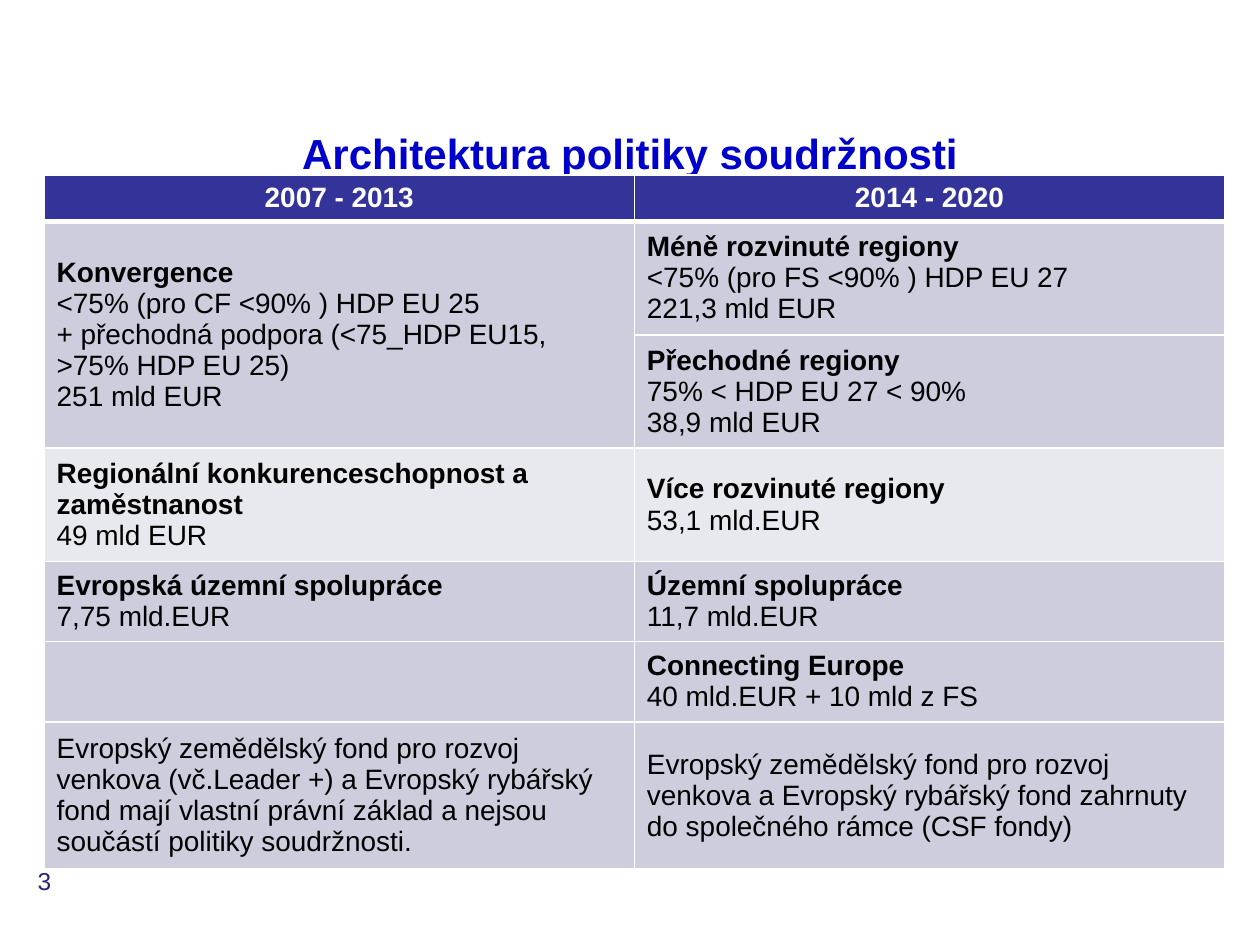
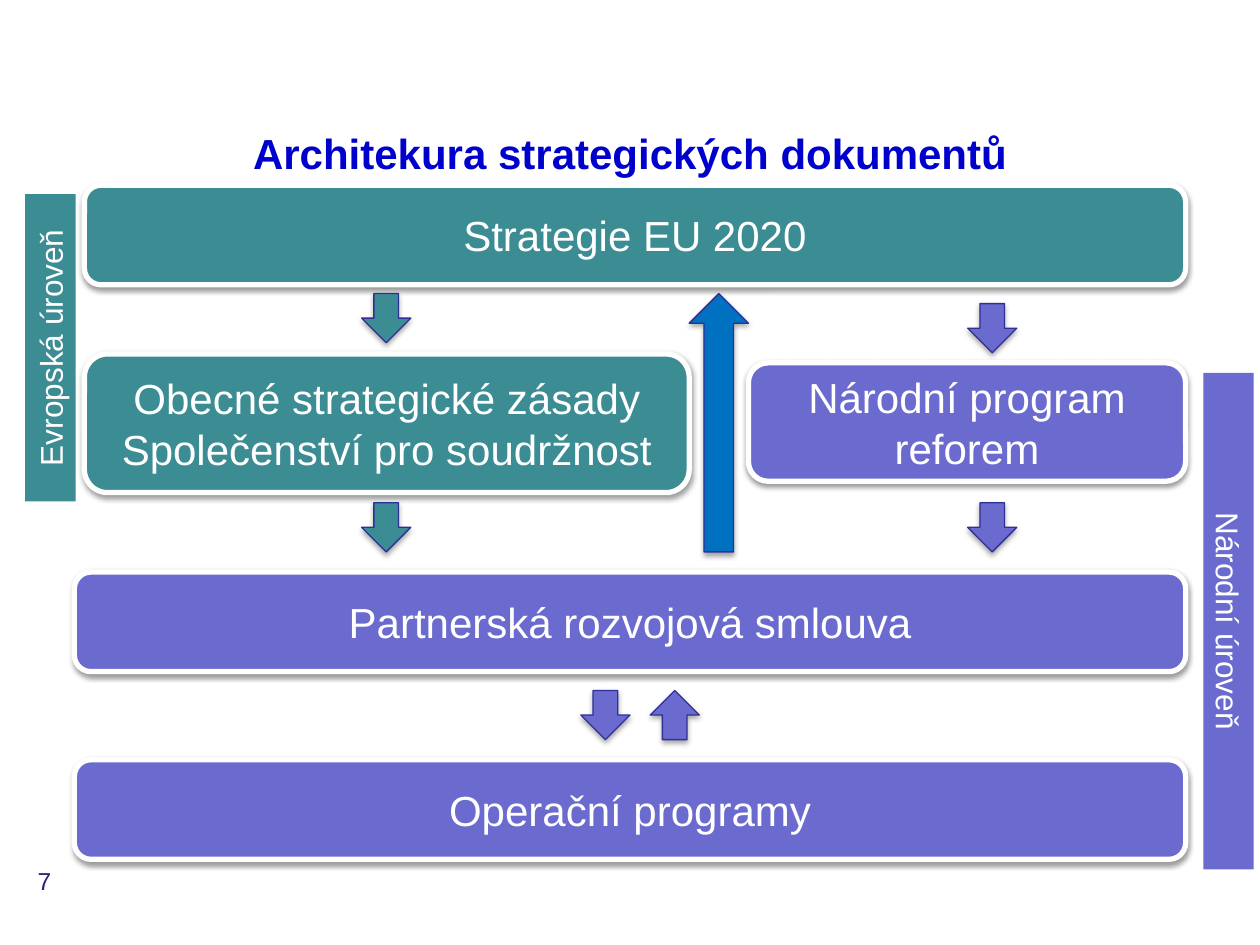
from dataclasses import dataclass

from lxml import etree
from pptx import Presentation
from pptx.dml.color import RGBColor
from pptx.enum.shapes import MSO_SHAPE
from pptx.enum.text import MSO_ANCHOR, PP_ALIGN
from pptx.oxml import parse_xml
from pptx.oxml.ns import nsdecls, qn
from pptx.util import Inches, Pt

ROUNDED, RECTANGLE = MSO_SHAPE.ROUNDED_RECTANGLE, MSO_SHAPE.RECTANGLE
DOWN, UP = MSO_SHAPE.DOWN_ARROW, MSO_SHAPE.UP_ARROW
LEFT, CENTER = PP_ALIGN.LEFT, PP_ALIGN.CENTER
TOP, MIDDLE = MSO_ANCHOR.TOP, MSO_ANCHOR.MIDDLE


@dataclass(frozen=True)
class Theme:
    font: str = "Arial"
    title: str = "0000CC"
    number: str = "262673"
    white: str = "FFFFFF"
    black: str = "000000"
    header: str = "333399"
    band_dark: str = "CDCDDE"
    band_light: str = "E8E8EF"
    european: str = "3C8C93"
    national: str = "6B6BCF"
    feedback: str = "0070C0"
    arrow_line: str = "2F2F98"
    title_size: int = 24
    box_size: int = 24
    label_size: int = 18
    table_size: int = 16
    number_size: int = 14


THEME = Theme()
TITLE_BOX = (0, 0.76, 10, 0.71)
NUMBER_BOX = (0.2, 6.82, 2.33, 0.52)
TABLE_BOX = (0.35, 1.39, 9.37, 5.48)
DIAGRAM_BOX = (0.59, 1.47, 8.82, 5.35)

# Each cell: (bold heading, plain lines); None continues the cell above
PERIODS = ("2007 - 2013", "2014 - 2020")
ROW_HEIGHTS = (0.35, 0.9, 0.9, 0.9, 0.63, 0.64, 1.16)
LIGHT_ROW = 3
POLICY_ROWS = (
    (("Konvergence", ("<75% (pro CF <90% ) HDP EU 25",
                      "+ přechodná podpora (<75_HDP EU15, >75% HDP EU 25)",
                      "251 mld EUR")),
     ("Méně rozvinuté regiony", ("<75% (pro FS <90% ) HDP EU 27", "221,3 mld EUR"))),
    (None,
     ("Přechodné regiony", ("75% < HDP EU 27 < 90%", "38,9 mld EUR"))),
    (("Regionální konkurenceschopnost a zaměstnanost", ("49 mld EUR",)),
     ("Více rozvinuté regiony", ("53,1 mld.EUR",))),
    (("Evropská územní spolupráce", ("7,75 mld.EUR",)),
     ("Územní spolupráce", ("11,7 mld.EUR",))),
    (("", ()),
     ("Connecting Europe", ("40 mld.EUR + 10 mld z FS",))),
    (("", ("Evropský zemědělský fond pro rozvoj venkova (vč.Leader +) a Evropský "
           "rybářský fond mají vlastní právní základ a nejsou součástí politiky "
           "soudržnosti.",)),
     ("", ("Evropský zemědělský fond pro rozvoj venkova a Evropský rybářský fond "
           "zahrnuty do společného rámce (CSF fondy)",))),
)

# Diagram parts, relative to the diagram box
BAR_HEIGHT = 0.79
ARROW_SIZE = 0.39
EUROPEAN_COLUMN, NATIONAL_COLUMN = 2.28, 7.09
LOWER_ARROWS, EXCHANGE_ARROWS = 2.52, 4.01
DOCUMENTS = (
    (("Obecné strategické zásady", "Společenství pro soudržnost"),
     (0.08, 1.34, 4.8, 1.1), THEME.european),
    (("Strategie EU 2020",), (0.08, 0, 8.74, BAR_HEIGHT), THEME.european),
    (("Národní program reforem",), (5.35, 1.41, 3.47, 0.94), THEME.national),
    (("Partnerská rozvojová smlouva",), (0, 3.07, 8.82, BAR_HEIGHT), THEME.national),
    (("Operační programy",), (0, 4.56, 8.82, BAR_HEIGHT), THEME.national),
)
ARROWS = (
    (DOWN, EUROPEAN_COLUMN, 0.86, THEME.european),
    (DOWN, EUROPEAN_COLUMN, LOWER_ARROWS, THEME.european),
    (DOWN, NATIONAL_COLUMN, 0.94, THEME.national),
    (DOWN, NATIONAL_COLUMN, LOWER_ARROWS, THEME.national),
    (DOWN, 4.02, EXCHANGE_ARROWS, THEME.national),
    (UP, 4.57, EXCHANGE_ARROWS, THEME.national),
)
FEEDBACK_ARROW = (4.88, 0.86, 0.47, 2.05)
LEVELS = (
    ("Evropská úroveň", (-0.39, 0.07, 0.4, 2.44), 270, THEME.european),
    ("Národní úroveň", (8.96, 1.49, 0.4, 3.94), 90, THEME.national),
)


def color(value):
    return RGBColor.from_string(value)


def inside(box, part):
    """Turn a place relative to a box into a place on the slide."""
    return box[0] + part[0], box[1] + part[1], part[2], part[3]


def write(text_frame, lines, size, ink, align=LEFT, spacing=None):
    """Write (text, bold) lines as paragraphs."""
    for index, (text, bold) in enumerate(lines):
        paragraph = text_frame.paragraphs[0] if index == 0 else text_frame.add_paragraph()
        paragraph.alignment = align
        if spacing:
            paragraph.line_spacing = spacing
        run = paragraph.add_run()
        run.text = text
        formats = {"name": THEME.font, "size": Pt(size), "bold": bold}
        for name, value in formats.items():
            setattr(run.font, name, value)
        run.font.color.rgb = color(ink)


def add_text(slide, box, text, size, ink, anchor=TOP, bold=False, **layout):
    text_frame = slide.shapes.add_textbox(*map(Inches, box)).text_frame
    text_frame.word_wrap = True
    text_frame.vertical_anchor = anchor
    write(text_frame, [(text, bold)], size, ink, **layout)


def add_block(slide, kind, box, fill, line=None, shadow=None):
    """Add a filled shape; line is (colour, points), shadow (opacity, distance)."""
    shape = slide.shapes.add_shape(kind, *map(Inches, box))
    shape.shadow.inherit = False
    shape.fill.solid()
    shape.fill.fore_color.rgb = color(fill)
    if line:
        shape.line.color.rgb = color(line[0])
        shape.line.width = Pt(line[1])
    else:
        shape.line.fill.background()
    if shadow:
        opacity, distance = shadow
        effects = shape._element.spPr.find(qn("a:effectLst"))
        outer = etree.SubElement(effects, qn("a:outerShdw"), blurRad=str(Pt(3.1)),
                                 dist=str(Pt(distance)), dir="5400000", rotWithShape="0")
        ink = etree.SubElement(outer, qn("a:srgbClr"), val=THEME.black)
        etree.SubElement(ink, qn("a:alpha"), val=str(opacity * 1000))
    shape.text_frame.word_wrap = True
    shape.text_frame.vertical_anchor = MIDDLE
    return shape


def add_frame(presentation, title, number):
    """Add a slide with the shared number and title."""
    slide = presentation.slides.add_slide(presentation.slide_layouts[6])
    add_text(slide, NUMBER_BOX, number, THEME.number_size, THEME.number)
    add_text(slide, TITLE_BOX, title, THEME.title_size, THEME.title,
             anchor=MIDDLE, bold=True, align=CENTER, spacing=1.5)
    return slide


def style_cell(cell, fill, top=1, bottom=1):
    """Fill a cell and give it white borders."""
    cell.fill.solid()
    cell.fill.fore_color.rgb = color(fill)
    cell.vertical_anchor = MIDDLE
    properties = cell._tc.get_or_add_tcPr()
    widths = {"lnL": 1, "lnR": 1, "lnT": top, "lnB": bottom}
    for position, (side, width) in enumerate(widths.items()):
        properties.insert(position, parse_xml(
            f'<a:{side} {nsdecls("a")} w="{Pt(width)}"><a:solidFill>'
            f'<a:srgbClr val="{THEME.white}"/></a:solidFill></a:{side}>'))


def add_policy_table(slide, box):
    row_count, column_count = len(ROW_HEIGHTS), len(PERIODS)
    table = slide.shapes.add_table(row_count, column_count, *map(Inches, box)).table
    table.first_row = table.horz_banding = False
    for column in table.columns:
        column.width = Inches(box[2] / column_count)
    for row, height in zip(table.rows, ROW_HEIGHTS):
        row.height = Inches(height)

    # Header row
    for index, period in enumerate(PERIODS):
        cell = table.cell(0, index)
        style_cell(cell, THEME.header, bottom=3)
        write(cell.text_frame, [(period, True)], THEME.table_size, THEME.white, CENTER)

    # Body rows
    for row_index, contents in enumerate(POLICY_ROWS, start=1):
        fill = THEME.band_light if row_index == LIGHT_ROW else THEME.band_dark
        for column_index, content in enumerate(contents):
            cell = table.cell(row_index, column_index)
            style_cell(cell, fill, top=3 if row_index == 1 else 1)
            if content is None:
                table.cell(row_index - 1, column_index).merge(cell)
                continue
            heading, details = content
            lines = [(heading, True)] if heading else []
            lines += [(detail, False) for detail in details]
            write(cell.text_frame, lines, THEME.table_size, THEME.black)


def add_level(slide, box, text, rotation, fill):
    """Add a sideways label that covers the given upright box."""
    left, top, width, height = box
    shift = (height - width) / 2
    shape = add_block(slide, RECTANGLE, (left - shift, top + shift, height, width), fill)
    shape.rotation = rotation
    write(shape.text_frame, [(text, False)], THEME.label_size, THEME.white, CENTER)


def add_document_diagram(slide, box):
    # Documents
    for lines, part, fill in DOCUMENTS:
        shape = add_block(slide, ROUNDED, inside(box, part), fill,
                          line=(THEME.white, 3), shadow=(38, 1.6))
        write(shape.text_frame, [(line, False) for line in lines],
              THEME.box_size, THEME.white, CENTER)

    # Arrows between documents
    arrows = [(kind, (left, top, ARROW_SIZE, ARROW_SIZE), fill)
              for kind, left, top, fill in ARROWS]
    arrows.append((UP, FEEDBACK_ARROW, THEME.feedback))
    for kind, part, fill in arrows:
        add_block(slide, kind, inside(box, part), fill,
                  line=(THEME.arrow_line, 0.75), shadow=(35, 1.8))

    # Level labels at the sides
    for text, part, rotation, fill in LEVELS:
        add_level(slide, inside(box, part), text, rotation, fill)


def main():
    presentation = Presentation()
    presentation.slide_width, presentation.slide_height = Inches(10), Inches(7.5)

    policy_slide = add_frame(presentation, "Architektura politiky soudržnosti", "3")
    add_policy_table(policy_slide, TABLE_BOX)

    documents_slide = add_frame(presentation, "Architekura strategických dokumentů", "7")
    add_document_diagram(documents_slide, DIAGRAM_BOX)

    presentation.save("out.pptx")


if __name__ == "__main__":
    main()
